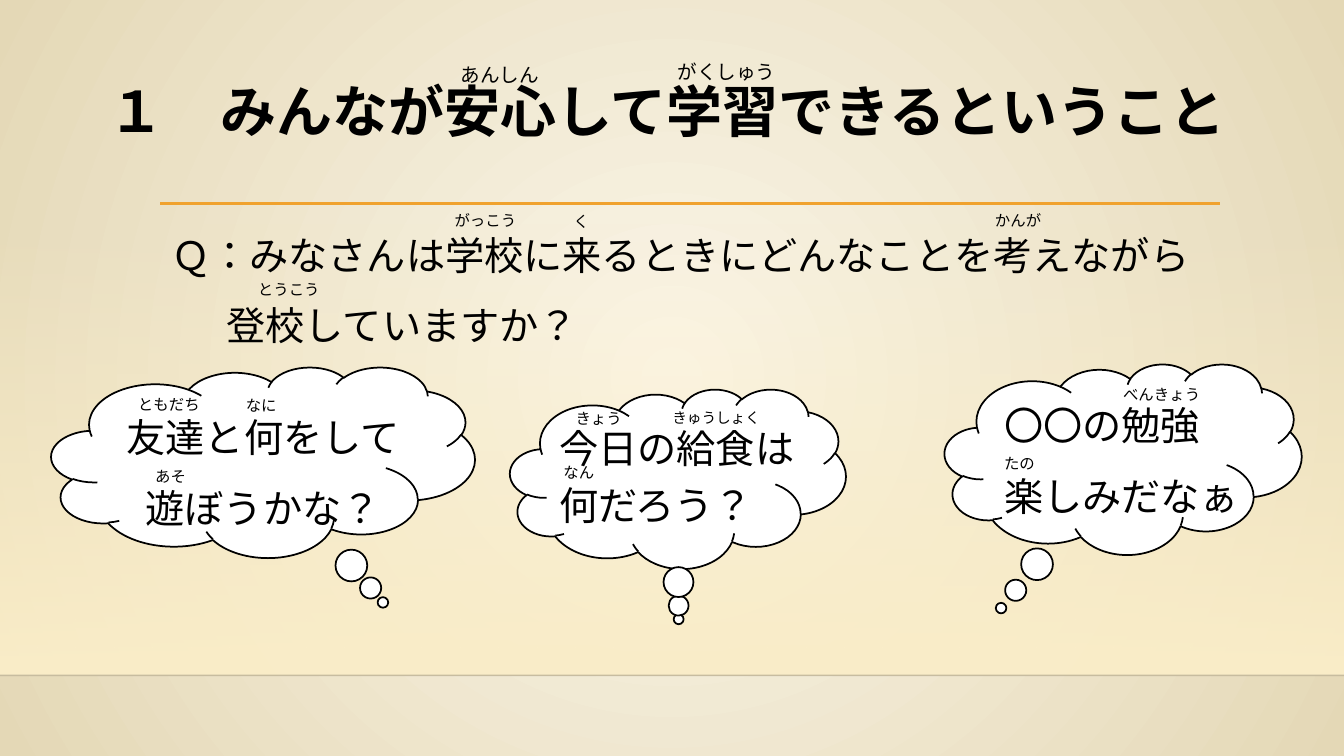
from lxml.etree import SubElement
from pptx import Presentation
from pptx.dml.color import RGBColor
from pptx.enum.lang import MSO_LANGUAGE_ID
from pptx.enum.shapes import MSO_CONNECTOR, MSO_SHAPE
from pptx.enum.text import MSO_ANCHOR, PP_ALIGN
from pptx.oxml.ns import qn
from pptx.util import Inches, Pt

FONT = "Noto Sans CJK JP"
INK = "000000"
TITLE = "１　みんなが安心して学習できるということ"
QUESTION = [
    "Ｑ：みなさんは学校に来るときにどんなことを考えながら",
    "登校していますか？",
]
# Cloud box, tail point, text box, alignment, paragraphs
CLOUDS = [
    ((0.51, 3.64, 4.2, 1.89), (0.283, 0.736), (0.86, 3.96, 3.5, 1.44),
     PP_ALIGN.CENTER, ["友達と何をして", "遊ぼうかな？"]),
    ((5.06, 3.86, 3.33, 1.78), (0.002, 0.783), (5.45, 4.07, 2.63, 1.44),
     PP_ALIGN.LEFT, ["今日の給食は何だろう？"]),
    ((9.37, 3.61, 3.54, 1.89), (-0.342, 0.782), (9.86, 3.84, 2.63, 1.44),
     PP_ALIGN.LEFT, ["〇〇の勉強", "楽しみだなぁ"]),
]
# Reading, left, top, width, size
TITLE_READINGS = [
    ("あんしん", 4.47, 0.58, 0.98, 14),
    ("がくしゅう", 6.62, 0.55, 1.21, 14),
]
QUESTION_READINGS = [
    ("がっこう", 4.41, 2.04, 0.98, 11),
    ("く", 5.59, 2.06, 0.35, 11),
    ("かんが", 9.77, 2.05, 0.98, 11),
    ("とうこう", 2.46, 2.73, 0.98, 11),
]
CLOUD_READINGS = [
    ("ともだち", 1.27, 3.87, 0.89, 11),
    ("なに", 2.34, 3.88, 0.54, 11),
    ("あそ", 1.44, 4.58, 0.54, 11),
    ("きょう", 5.61, 4.01, 0.84, 11),
    ("きゅうしょく", 6.57, 4.01, 1.15, 10.5),
    ("なん", 5.49, 4.54, 0.54, 11),
    ("べんきょう", 11.04, 3.77, 0.98, 11),
    ("たの", 9.86, 4.46, 0.54, 11),
]


def color(value):
    return RGBColor.from_string(value)


def inches(box):
    return [Inches(length) for length in box]


def set_alpha(parent, percent):
    """Make the first colour found under parent partly transparent."""
    rgb = next(parent.iter(qn("a:srgbClr")))
    SubElement(rgb, qn("a:alpha"), val=str(percent * 1000))


def fill_gradient(fill, first, last):
    fill.gradient()
    for stop, value, position in zip(fill.gradient_stops, (first, last), (0, 1)):
        stop.color.rgb = color(value)
        stop.position = position


def add_text(shapes, paragraphs, box, size, bold=False, align=PP_ALIGN.LEFT,
             spacing=1.2, gap=10, last_indent=0, wrap=True):
    frame = shapes.add_textbox(*inches(box)).text_frame
    frame.word_wrap = wrap
    frame.vertical_anchor = MSO_ANCHOR.TOP
    for index, text in enumerate(paragraphs):
        paragraph = frame.add_paragraph() if index else frame.paragraphs[0]
        paragraph.alignment = align
        paragraph.line_spacing = spacing
        if index:
            paragraph.space_before = Pt(gap)
        if last_indent and index == len(paragraphs) - 1:
            paragraph._p.get_or_add_pPr().set("marL", str(Inches(last_indent)))
        run = paragraph.add_run()
        run.text = text
        run.font.size = Pt(size)
        run.font.bold = bold
        run.font.color.rgb = color(INK)
        run.font.name = FONT
        run.font.language_id = MSO_LANGUAGE_ID.JAPANESE
        SubElement(run._r.get_or_add_rPr(), qn("a:ea"), typeface=FONT)


def add_readings(shapes, readings):
    """Set small kana above the words they belong to."""
    for text, left, top, width, size in readings:
        height = 0.34 if size == 14 else 0.29
        add_text(shapes, [text], (left, top, width, height), size,
                 spacing=1.0, wrap=False)


def add_rule(shapes, left, right, top, value, width):
    rule = shapes.add_connector(
        MSO_CONNECTOR.STRAIGHT, *inches((left, top, right, top)))
    rule.line.color.rgb = color(value)
    rule.line.width = Pt(width)
    SubElement(rule._element.spPr, qn("a:effectLst"))
    return rule


def add_cloud(shapes, box, tail, text_box, align, paragraphs):
    group = shapes.add_group_shape().shapes
    cloud = group.add_shape(MSO_SHAPE.CLOUD_CALLOUT, *inches(box))
    cloud.shadow.inherit = False
    cloud.adjustments[0], cloud.adjustments[1] = tail
    cloud.fill.solid()
    cloud.fill.fore_color.rgb = color("FFFFFF")
    cloud.line.color.rgb = color(INK)
    cloud.line.width = Pt(1.25)
    add_text(group, paragraphs, text_box, 28, align=align)


def add_backdrop(slide):
    fill_gradient(slide.background.fill, "FBF6E9", "E4D8B6")
    gradient = next(slide._element.iter(qn("a:gradFill")))
    gradient.remove(gradient.find(qn("a:lin")))
    circle = SubElement(gradient, qn("a:path"))
    circle.set("path", "circle")
    center = {side: "50000" for side in "ltrb"}
    SubElement(circle, qn("a:fillToRect"), **center)

    glow = slide.shapes.add_shape(
        MSO_SHAPE.RECTANGLE, *inches((0, 2.21, 13.33, 4.49)))
    glow.shadow.inherit = False
    fill_gradient(glow.fill, "FBEEC9", "FBEEC9")
    glow.fill.gradient_angle = 270
    set_alpha(glow._element.spPr, 0)
    glow.line.fill.background()

    floor = add_rule(slide.shapes, 0, 13.33, 6.7, "000001", 1)
    set_alpha(floor._element.spPr, 20)


def main():
    presentation = Presentation()
    presentation.slide_width = Inches(13.33)
    presentation.slide_height = Inches(7.5)
    slide = presentation.slides.add_slide(presentation.slide_layouts[6])
    shapes = slide.shapes

    add_backdrop(slide)
    add_rule(shapes, 1.59, 12.1, 2.02, "F0A22E", 2.5)
    add_text(shapes, [TITLE], (0.98, 0.79, 11.49, 1.26), 40, bold=True, spacing=0.9)
    add_text(shapes, QUESTION, (1.6, 2.15, 10.5, 1.44), 28, last_indent=0.55)
    for cloud in CLOUDS:
        add_cloud(shapes, *cloud)
    add_readings(shapes, TITLE_READINGS)
    add_readings(shapes.add_group_shape().shapes, QUESTION_READINGS)
    add_readings(shapes, CLOUD_READINGS)
    presentation.save("out.pptx")


if __name__ == "__main__":
    main()
